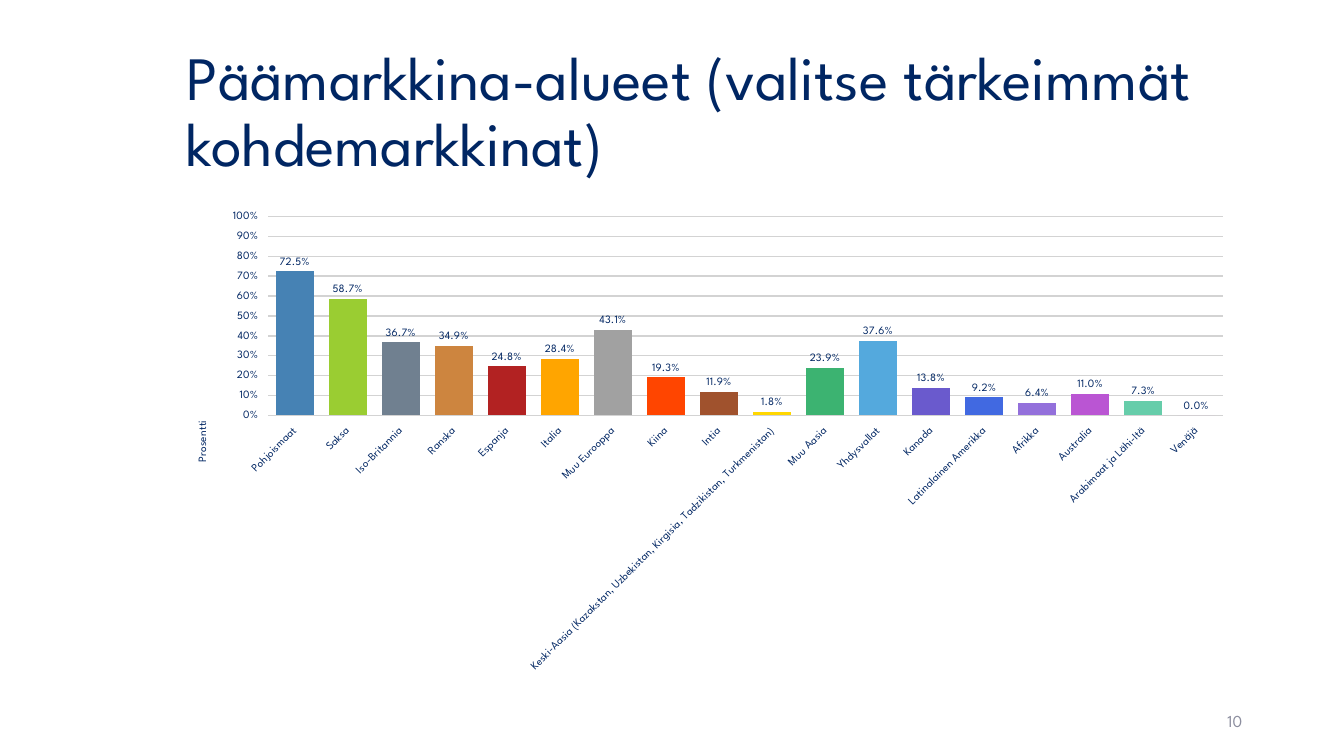
from pptx import Presentation
from pptx.chart.data import CategoryChartData
from pptx.dml.color import RGBColor
from pptx.enum.chart import XL_CHART_TYPE as ChartType, XL_LABEL_POSITION as LabelPos
from pptx.enum.chart import XL_TICK_MARK as TickMark
from pptx.enum.text import MSO_ANCHOR as Anchor, PP_ALIGN as Align
from pptx.util import Inches, Pt

COLORS = {"navy": "002663", "muted": "8C8E9F", "grid": "D3D3D3"}

MARKETS = [
    ("Pohjoismaat", 0.725, "4682B4"),
    ("Saksa", 0.587, "9ACD32"),
    ("Iso-Britannia", 0.367, "708090"),
    ("Ranska", 0.349, "CD853F"),
    ("Espanja", 0.248, "B22222"),
    ("Italia", 0.284, "FFA500"),
    ("Muu Eurooppa", 0.431, "A1A1A1"),
    ("Kiina", 0.193, "FF4500"),
    ("Intia", 0.119, "A0522D"),
    ("Keski-Aasia (Kazakstan, Uzbekistan, Kirgisia, Tadzikistan, Turkmenistan)", 0.018, "FFD700"),
    ("Muu Aasia", 0.239, "3CB371"),
    ("Yhdysvallat", 0.376, "54A9DD"),
    ("Kanada", 0.138, "6A5ACD"),
    ("Latinalainen Amerikka", 0.092, "4169E1"),
    ("Afrikka", 0.064, "9370DB"),
    ("Australia", 0.11, "BA55D3"),
    ("Arabimaat ja Lähi-Itä", 0.073, "66CDAA"),
    ("Venäjä", 0, "D8BFD8"),
]


class SlideBuilder:
    typeface = "League Spartan"

    def __init__(self, slide):
        self.slide = slide

    def color(self, name):
        return RGBColor.from_string(COLORS[name])

    def style(self, font, size, color="navy"):
        font.name = self.typeface
        font.size = Pt(size)
        font.bold = False
        font.color.rgb = self.color(color)

    def text(self, words, box, size, color, align=Align.LEFT, spacing=1.0):
        frame = self.slide.shapes.add_textbox(*map(Inches, box)).text_frame
        frame.word_wrap = True
        frame.vertical_anchor = Anchor.MIDDLE
        paragraph = frame.paragraphs[0]
        paragraph.text = words
        paragraph.alignment = align
        paragraph.line_spacing = spacing
        self.style(paragraph.font, size, color)

    def column_chart(self, rows, axis_title, box):
        names, shares, fills = zip(*rows)
        data = CategoryChartData()
        data.categories = names
        data.add_series("Series 1", shares)
        chart = self.slide.shapes.add_chart(
            ChartType.COLUMN_CLUSTERED, *map(Inches, box), data).chart
        chart.has_legend = False
        chart.has_title = False
        self.style(chart.font, 18)

        for axis in (chart.category_axis, chart.value_axis):
            self.style(axis.tick_labels.font, 8)
            axis.major_tick_mark = TickMark.OUTSIDE
            axis.format.line.fill.background()
        body = chart.category_axis._element.txPr.bodyPr
        body.set("rot", "-2700000")
        body.set("vert", "horz")
        self.value_axis(chart.value_axis, axis_title)

        plot = chart.plots[0]
        plot.gap_width = 40
        plot.overlap = -2
        plot.vary_by_categories = False
        plot.has_data_labels = True
        labels = plot.data_labels
        labels.show_value = True
        labels.number_format = "0.0%"
        labels.number_format_is_linked = False
        labels.position = LabelPos.OUTSIDE_END
        self.style(labels.font, 8)
        for index, fill in enumerate(fills):
            column = plot.series[0].points[index].format.fill
            column.solid()
            column.fore_color.rgb = RGBColor.from_string(fill)

    def value_axis(self, axis, title):
        axis.minimum_scale = 0
        axis.maximum_scale = 1
        axis.major_unit = 0.1
        axis.tick_labels.number_format = "0%"
        axis.tick_labels.number_format_is_linked = False
        axis.has_major_gridlines = True
        gridline = axis.major_gridlines.format.line
        gridline.color.rgb = self.color("grid")
        gridline.width = Pt(1)
        frame = axis.axis_title.text_frame
        frame.text = title
        self.style(frame.paragraphs[0].font, 8)
        frame._txBody.bodyPr.set("rot", "-5400000")
        frame._txBody.bodyPr.set("vert", "horz")


def main():
    deck = Presentation()
    deck.slide_width = Inches(13.33)
    deck.slide_height = Inches(7.5)
    builder = SlideBuilder(deck.slides.add_slide(deck.slide_layouts[6]))
    builder.text("Päämarkkina-alueet (valitse tärkeimmät kohdemarkkinat)",
                 (1.75, 0.4, 10.59, 1.45), 44, "navy", spacing=0.9)
    builder.text("10", (9.42, 6.95, 3, 0.4), 12, "muted", Align.RIGHT)
    builder.column_chart(MARKETS, "Prosentti", (1.75, 2, 10.59, 4.76))
    deck.save("out.pptx")


if __name__ == "__main__":
    main()
